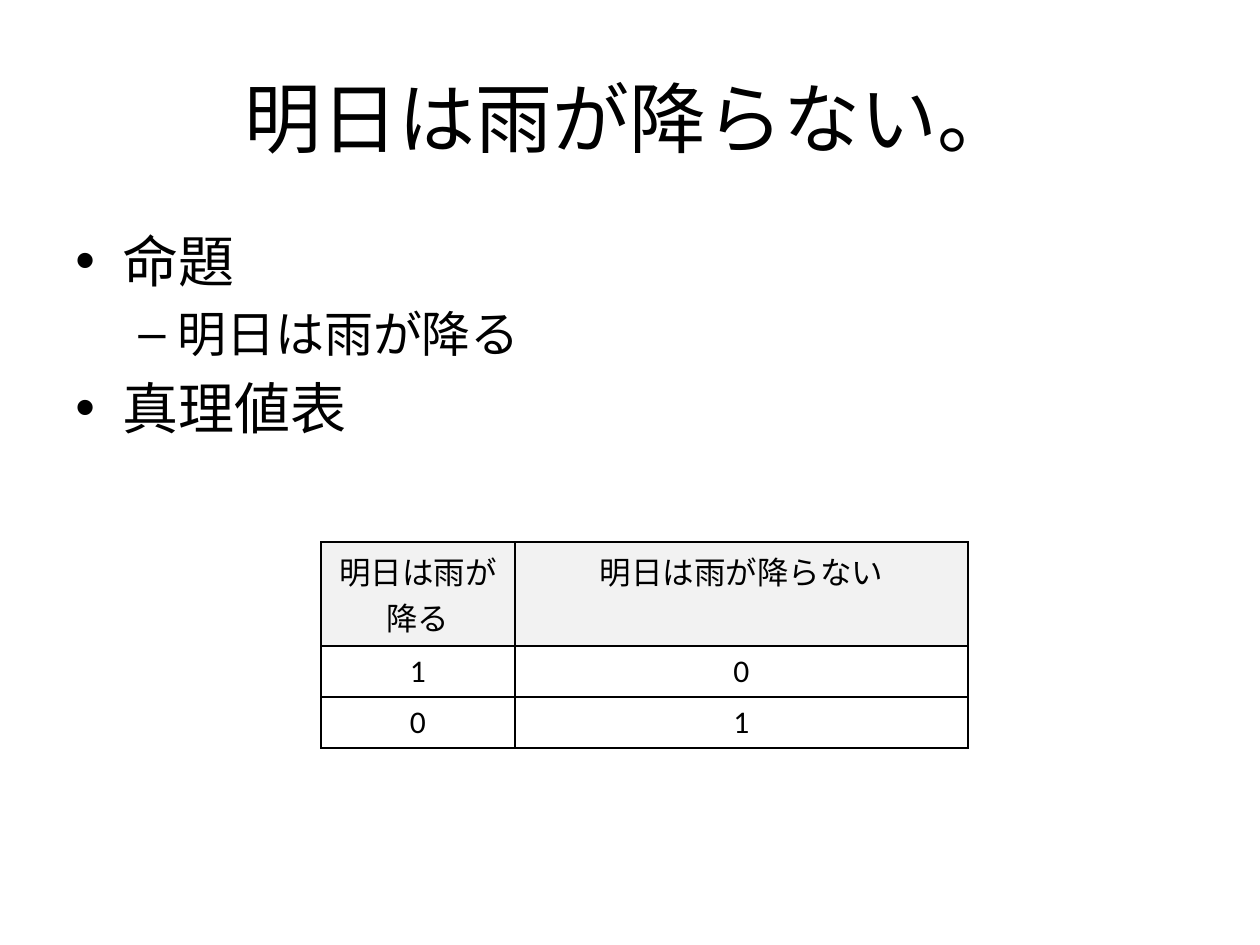
from lxml.etree import SubElement
from pptx import Presentation
from pptx.dml.color import RGBColor
from pptx.enum.text import MSO_ANCHOR as Anchor, PP_ALIGN as Align
from pptx.oxml.ns import qn
from pptx.util import Pt

PX = 914400 // 126
BLACK = RGBColor(0x00, 0x00, 0x00)
HEADER_GRAY = RGBColor(0xF2, 0xF2, 0xF2)
FONT = "Calibri"

TITLE = "明日は雨が降らない。"
BULLETS = [(0, "命題"), (1, "明日は雨が降る"), (0, "真理値表")]
TRUTH_TABLE = [
    ("明日は雨が降る", "明日は雨が降らない"),
    ("1", "0"),
    ("0", "1"),
]

# Left, top, width, height in px
TITLE_BOX = (63, 38, 1134, 157)
BODY_BOX = (63, 220, 1134, 624)
TABLE_ORIGIN = (321, 542)
COLUMN_WIDTHS = (194, 453)
ROW_HEIGHTS = (104, 51, 51)

# Indents in px, sizes in points
LEVELS = [
    {"size": 32, "margin": 47, "hanging": 47, "bullet": "•"},
    {"size": 28, "margin": 102, "hanging": 39, "bullet": "–"},
]


def to_emu(lengths):
    return [length * PX for length in lengths]


def write(paragraph, text, size, align=Align.LEFT):
    paragraph.alignment = align
    run = paragraph.add_run()
    run.text = text
    font_format = {"name": FONT, "size": Pt(size), "bold": False}
    for name, value in font_format.items():
        setattr(run.font, name, value)
    run.font.color.rgb = BLACK


def add_text_frame(slide, box, anchor):
    frame = slide.shapes.add_textbox(*to_emu(box)).text_frame
    frame.word_wrap = True
    frame.vertical_anchor = anchor
    return frame


def add_bullets(frame):
    for index, (level, text) in enumerate(BULLETS):
        style = LEVELS[level]
        paragraph = frame.add_paragraph() if index else frame.paragraphs[0]
        paragraph.level = level
        paragraph.space_before = Pt(style["size"] * 0.2)
        write(paragraph, text, style["size"])
        properties = paragraph._p.get_or_add_pPr()
        properties.set("marL", str(style["margin"] * PX))
        properties.set("indent", str(-style["hanging"] * PX))
        SubElement(properties, qn("a:buFont"), typeface="Arial")
        SubElement(properties, qn("a:buChar"), char=style["bullet"])


def add_borders(cell):
    """Put a thin black line on all four sides, ahead of the cell's fill."""
    properties = cell._tc.get_or_add_tcPr()
    for position, side in enumerate(("lnL", "lnR", "lnT", "lnB")):
        line = SubElement(properties, qn(f"a:{side}"), w=str(Pt(1)))
        fill = SubElement(line, qn("a:solidFill"))
        SubElement(fill, qn("a:srgbClr"), val=str(BLACK))
        properties.insert(position, line)


def add_truth_table(slide):
    size = (sum(COLUMN_WIDTHS), sum(ROW_HEIGHTS))
    table = slide.shapes.add_table(
        len(ROW_HEIGHTS), len(COLUMN_WIDTHS), *to_emu(TABLE_ORIGIN + size)
    ).table
    table.first_row = table.horz_banding = False
    for column, width in zip(table.columns, COLUMN_WIDTHS):
        column.width = width * PX
    for row, height, texts in zip(table.rows, ROW_HEIGHTS, TRUTH_TABLE):
        row.height = height * PX
        for cell, text in zip(row.cells, texts):
            if texts is TRUTH_TABLE[0]:
                cell.fill.solid()
                cell.fill.fore_color.rgb = HEADER_GRAY
            else:
                cell.fill.background()
            add_borders(cell)
            write(cell.text_frame.paragraphs[0], text, 18, Align.CENTER)


def main():
    presentation = Presentation()
    presentation.slide_width, presentation.slide_height = to_emu((1260, 945))
    slide = presentation.slides.add_slide(presentation.slide_layouts[6])
    title = add_text_frame(slide, TITLE_BOX, Anchor.MIDDLE)
    write(title.paragraphs[0], TITLE, 44, Align.CENTER)
    add_bullets(add_text_frame(slide, BODY_BOX, Anchor.TOP))
    add_truth_table(slide)
    presentation.save("out.pptx")


if __name__ == "__main__":
    main()
